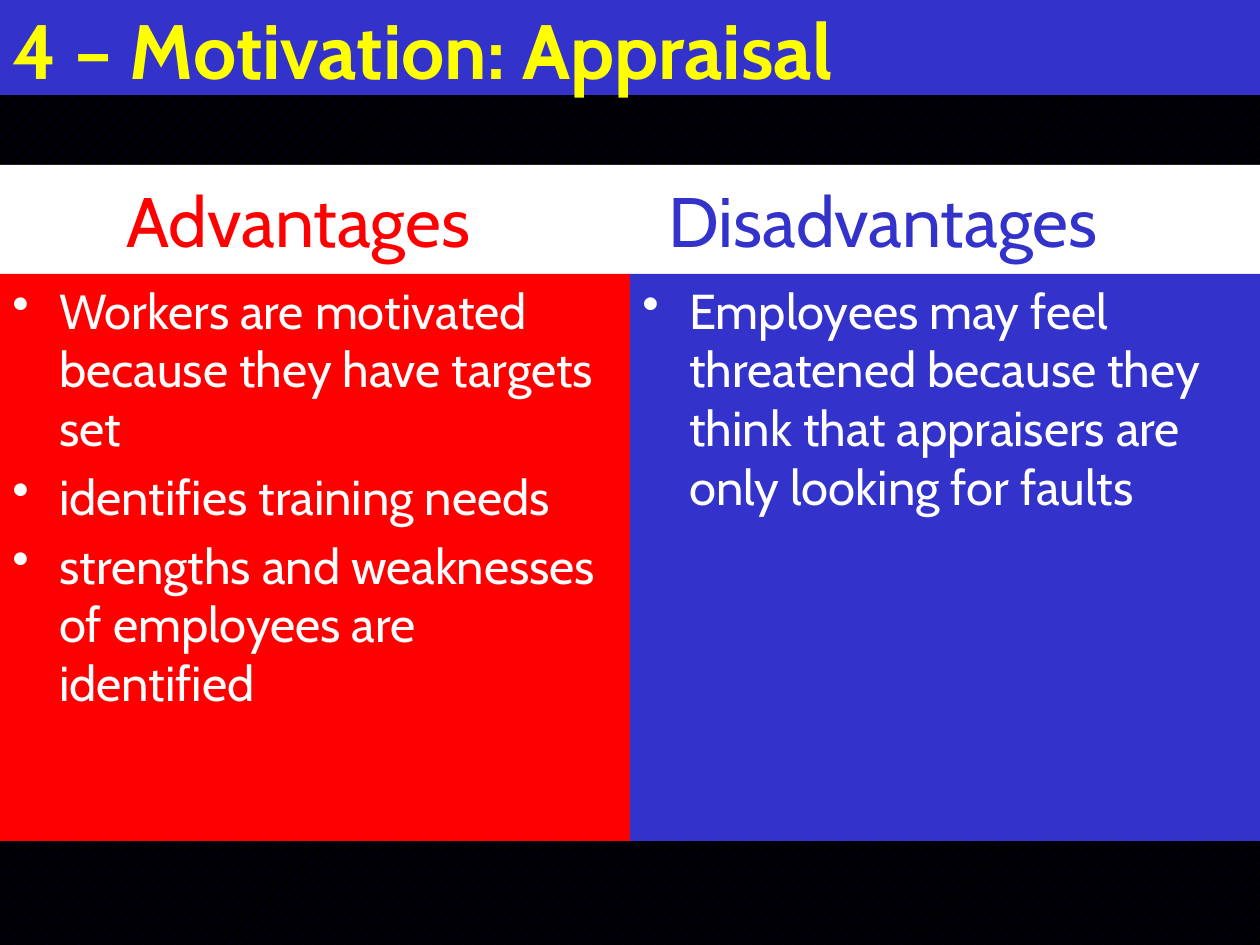
import pptx
import pptx.util
import pptx.dml.color
import pptx.enum.dml
import pptx.enum.shapes
import pptx.enum.text
import lxml.etree

RGB = pptx.dml.color.RGBColor
WHITE = RGB(255, 255, 255)
BLACK = RGB(0, 0, 0)
NAVY = RGB(0, 0, 0x66)
RED = RGB(255, 0, 0)
BLUE = RGB(0x33, 0x33, 0xCC)
YELLOW = RGB(255, 255, 0)

FONT = "Cabin"
TITLE = "4 – Motivation: Appraisal"
# heading, colour, tab stop of the heading, points
SIDES = [
    ("Advantages", RED, 114, [
        "Workers are motivated because they have targets set",
        "identifies training needs",
        "strengths and weaknesses of employees are identified",
    ]),
    ("Disadvantages", BLUE, 656, [
        "Employees may feel threatened because they think that "
        "appraisers are only looking for faults",
    ]),
]

WIDTH, HEIGHT = 1260, 945
HEAD_TOP, BODY_TOP, BODY_END = 165, 274, 841
INDENT = 47


def px(n):
    return round(n * 914400 / 126)


def add_box(slide, left, top, width, height, fill):
    box = slide.shapes.add_shape(
        pptx.enum.shapes.MSO_SHAPE.RECTANGLE,
        px(left), px(top), px(width), px(height))
    box.shadow.inherit = False
    box.fill.solid()
    box.fill.fore_color.rgb = fill
    box.line.fill.background()
    box.text_frame.word_wrap = True
    box.text_frame.vertical_anchor = pptx.enum.text.MSO_ANCHOR.TOP
    return box


def style(para, size, colors, bold=False):
    """Format the runs of a left-aligned paragraph, one colour per run."""
    para.alignment = pptx.enum.text.PP_ALIGN.LEFT
    for run, color in zip(para.runs, colors):
        run.font.name = FONT
        run.font.size = pptx.util.Pt(size)
        run.font.bold = bold
        run.font.color.rgb = color


def add_child(parent, tag, **attrs):
    name = pptx.oxml.ns.qn(tag)
    return lxml.etree.SubElement(parent, name, attrs)


def add_heads(slide):
    box = add_box(slide, 0, HEAD_TOP, WIDTH, BODY_TOP - HEAD_TOP, WHITE)
    box.text_frame.vertical_anchor = pptx.enum.text.MSO_ANCHOR.MIDDLE
    para = box.text_frame.paragraphs[0]
    tabs = add_child(para._p.get_or_add_pPr(), "a:tabLst")
    for head, color, stop, points in SIDES:
        add_child(tabs, "a:tab", pos=str(px(stop)), algn="l")
        para.add_run().text = "\t" + head
    style(para, 40, [side[1] for side in SIDES])


def add_list(slide, left, width, fill, points):
    box = add_box(slide, left, BODY_TOP, width, BODY_END - BODY_TOP, fill)
    frame = box.text_frame
    frame.text = "\n".join(points)
    for i, para in enumerate(frame.paragraphs):
        props = para._p.get_or_add_pPr()
        props.set("marL", str(px(INDENT)))
        props.set("indent", str(-px(INDENT)))
        add_child(props, "a:buChar", char="•")
        if i:
            para.space_before = pptx.util.Pt(5.6)
        style(para, 28, [WHITE])


def main():
    deck = pptx.Presentation()
    deck.slide_width, deck.slide_height = px(WIDTH), px(HEIGHT)
    slide = deck.slides.add_slide(deck.slide_layouts[6])
    back = slide.background.fill
    back.patterned()
    back.pattern = pptx.enum.dml.MSO_PATTERN.PERCENT_20
    back.fore_color.rgb = NAVY
    back.back_color.rgb = BLACK

    add_heads(slide)
    width = WIDTH // len(SIDES)
    for i, (head, color, stop, points) in enumerate(SIDES):
        add_list(slide, i * width, width, color, points)

    title = add_box(slide, 0, -4, WIDTH, 99, BLUE)
    title.text_frame.text = TITLE
    style(title.text_frame.paragraphs[0], 44, [YELLOW], bold=True)
    deck.save("out.pptx")


if __name__ == "__main__":
    main()
